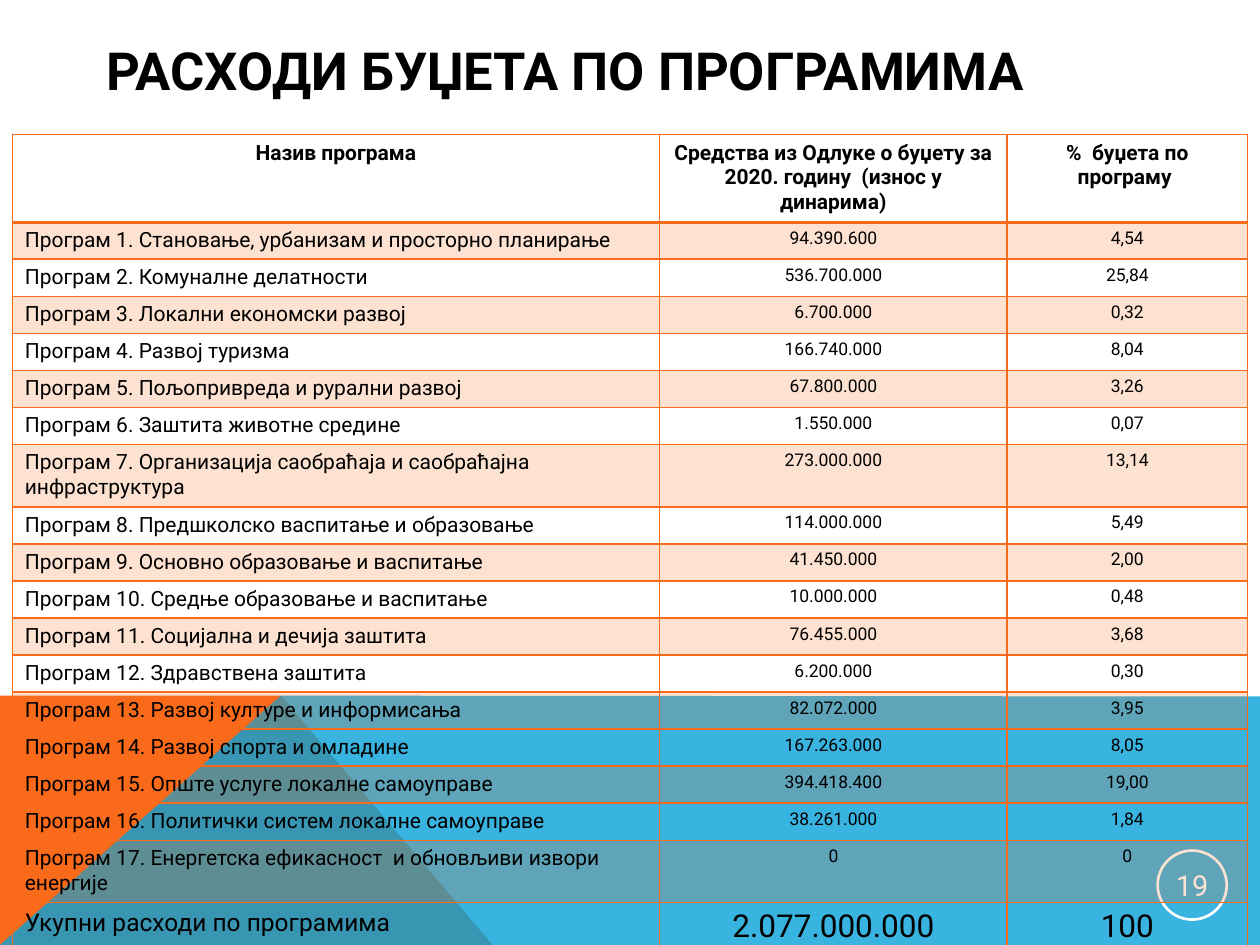
import dataclasses

import lxml.etree
import pptx
import pptx.dml.color
import pptx.enum.shapes
import pptx.enum.text
import pptx.oxml.ns
import pptx.util

Pt = pptx.util.Pt
RGB = pptx.dml.color.RGBColor.from_string
ALIGN = pptx.enum.text.PP_ALIGN
MIDDLE = pptx.enum.text.MSO_ANCHOR.MIDDLE
qn = pptx.oxml.ns.qn


@dataclasses.dataclass(frozen=True)
class Theme:
    font: str = "Roboto"
    ink: str = "000000"
    light: str = "FFFFFF"
    orange: str = "F96A1B"
    blue: str = "08A1D9"
    title_size: float = 30
    badge_size: float = 16.5
    label_size: float = 12
    value_size: float = 10
    total_label_size: float = 14
    total_value_size: float = 18


THEME = Theme()

HEADINGS = (
    "Назив програма",
    "Средства из Одлуке о буџету за 2020. годину  (износ у динарима)",
    "%  буџета по програму ",
)
PROGRAMS = (
    ("Становање, урбанизам и просторно планирање", "94.390.600", "4,54"),
    ("Комуналне делатности", "536.700.000", "25,84"),
    ("Локални економски развој", "6.700.000", "0,32"),
    ("Развој туризма", "166.740.000", "8,04"),
    ("Пољопривреда и рурални развој", "67.800.000", "3,26"),
    ("Заштита животне средине", "1.550.000", "0,07"),
    ("Организација саобраћаја и саобраћајна инфраструктура", "273.000.000", "13,14"),
    ("Предшколско васпитање и образовање", "114.000.000", "5,49"),
    ("Основно образовање и васпитање", "41.450.000", "2,00"),
    ("Средње образовање и васпитање", "10.000.000", "0,48"),
    ("Социјална и дечија заштита", "76.455.000", "3,68"),
    ("Здравствена заштита", "6.200.000", "0,30"),
    ("Развој културе и информисања", "82.072.000", "3,95"),
    ("Развој спорта и омладине", "167.263.000", "8,05"),
    ("Опште услуге локалне самоуправе", "394.418.400", "19,00"),
    ("Политички систем локалне самоуправе", "38.261.000", "1,84"),
    ("Енергетска ефикасност  и обновљиви извори енергије", "0", "0"),
)
TOTALS = ("Укупни расходи по програмима", "2.077.000.000", "100")

COLUMN_WIDTHS = (370, 198.5, 137.5)
ROW_HEIGHT = 21
SPECIAL_HEIGHTS = {0: 35.5, 7: 26, 17: 22.5, 18: 28}
CELL_MARGIN = 3.4


def write(frame, text, size, color, bold=False, align=ALIGN.LEFT):
    frame.text = text
    paragraph = frame.paragraphs[0]
    paragraph.alignment = align
    font = paragraph.runs[0].font
    font.name, font.size, font.bold = THEME.font, Pt(size), bold
    font.color.rgb = RGB(color)


def set_fill(owner, element, color, opacity=100):
    """Fill a shape or a cell, with opacity in percent."""
    owner.fill.solid()
    owner.fill.fore_color.rgb = RGB(color)
    if opacity < 100:
        srgb = element.xpath("./*/a:solidFill/a:srgbClr")[0]
        lxml.etree.SubElement(srgb, qn("a:alpha"), val=str(opacity * 1000))


def add_band(slide, corners, color, opacity=100):
    points = [(Pt(x), Pt(y)) for x, y in corners]
    builder = slide.shapes.build_freeform(*points[0], scale=1.0)
    builder.add_line_segments(points[1:], close=True)
    band = builder.convert_to_shape()
    band.shadow.inherit = False
    band.line.fill.background()
    set_fill(band, band._element, color, opacity)


def add_title(slide, text):
    title = slide.shapes.add_textbox(Pt(53.5), Pt(9.5), Pt(613.5), Pt(61))
    title.text_frame.word_wrap = True
    title.text_frame.vertical_anchor = MIDDLE
    write(title.text_frame, text, THEME.title_size, THEME.ink, bold=True)


def add_page_badge(slide, number):
    badge = slide.shapes.add_shape(
        pptx.enum.shapes.MSO_SHAPE.OVAL, Pt(661.5), Pt(486), Pt(39.5), Pt(39.5))
    badge.shadow.inherit = False
    badge.fill.background()
    badge.line.color.rgb = RGB(THEME.light)
    badge.line.width = Pt(1.5)
    frame = badge.text_frame
    frame.margin_left = frame.margin_right = Pt(0.7)
    frame.margin_top = frame.margin_bottom = Pt(0.7)
    frame.vertical_anchor = MIDDLE
    write(frame, number, THEME.badge_size, THEME.light, align=ALIGN.CENTER)


def set_borders(cell, top=1, bottom=1):
    properties = cell._tc.get_or_add_tcPr()
    widths = {"a:lnL": 1, "a:lnR": 1, "a:lnT": top, "a:lnB": bottom}
    # Borders come before the fill in the cell properties
    for place, (tag, width) in enumerate(widths.items()):
        line = lxml.etree.Element(qn(tag), w=str(Pt(width)))
        fill = lxml.etree.SubElement(line, qn("a:solidFill"))
        lxml.etree.SubElement(fill, qn("a:srgbClr"), val=THEME.orange)
        properties.insert(place, line)


def add_budget_table(slide):
    programs = [(f"Програм {number}. {name}", amount, share)
                for number, (name, amount, share) in enumerate(PROGRAMS, 1)]
    rows = [HEADINGS, *programs, TOTALS]
    last = len(rows) - 1
    heights = [SPECIAL_HEIGHTS.get(r, ROW_HEIGHT) for r in range(len(rows))]
    table = slide.shapes.add_table(
        len(rows), len(COLUMN_WIDTHS), Pt(7), Pt(77),
        Pt(sum(COLUMN_WIDTHS)), Pt(sum(heights))).table
    table.first_row = table.horz_banding = False
    for column, width in zip(table.columns, COLUMN_WIDTHS):
        column.width = Pt(width)

    for r, texts in enumerate(rows):
        table.rows[r].height = Pt(heights[r])
        if r == 0:
            sizes = (THEME.label_size, THEME.label_size)
        elif r == last:
            sizes = (THEME.total_label_size, THEME.total_value_size)
        else:
            sizes = (THEME.label_size, THEME.value_size)
        for c, text in enumerate(texts):
            cell = table.cell(r, c)
            cell.margin_top = cell.margin_bottom = Pt(CELL_MARGIN)
            centred = r == 0 or c > 0
            write(cell.text_frame, text, sizes[min(c, 1)], THEME.ink,
                  bold=r == 0, align=ALIGN.CENTER if centred else ALIGN.LEFT)
            if r % 2:
                set_fill(cell, cell._tc, THEME.orange, opacity=20)
            else:
                cell.fill.background()
            set_borders(cell, top=2 if r == 1 else 1, bottom=2 if r == 0 else 1)


def main():
    deck = pptx.Presentation()
    deck.slide_width, deck.slide_height = Pt(720), Pt(540)
    slide = deck.slides.add_slide(deck.slide_layouts[6])

    # Coloured bands along the bottom
    add_band(slide, [(0, 540), (0, 397.5), (160.5, 397.5), (281.5, 540)], THEME.orange)
    add_band(slide, [(0, 540), (160.5, 397.5), (720, 398), (720, 540)],
             THEME.blue, opacity=80)

    # Heading, page number and budget figures
    add_title(slide, "РАСХОДИ БУЏЕТА ПО ПРОГРАМИМА")
    add_page_badge(slide, "19")
    add_budget_table(slide)

    deck.save("out.pptx")


if __name__ == "__main__":
    main()
